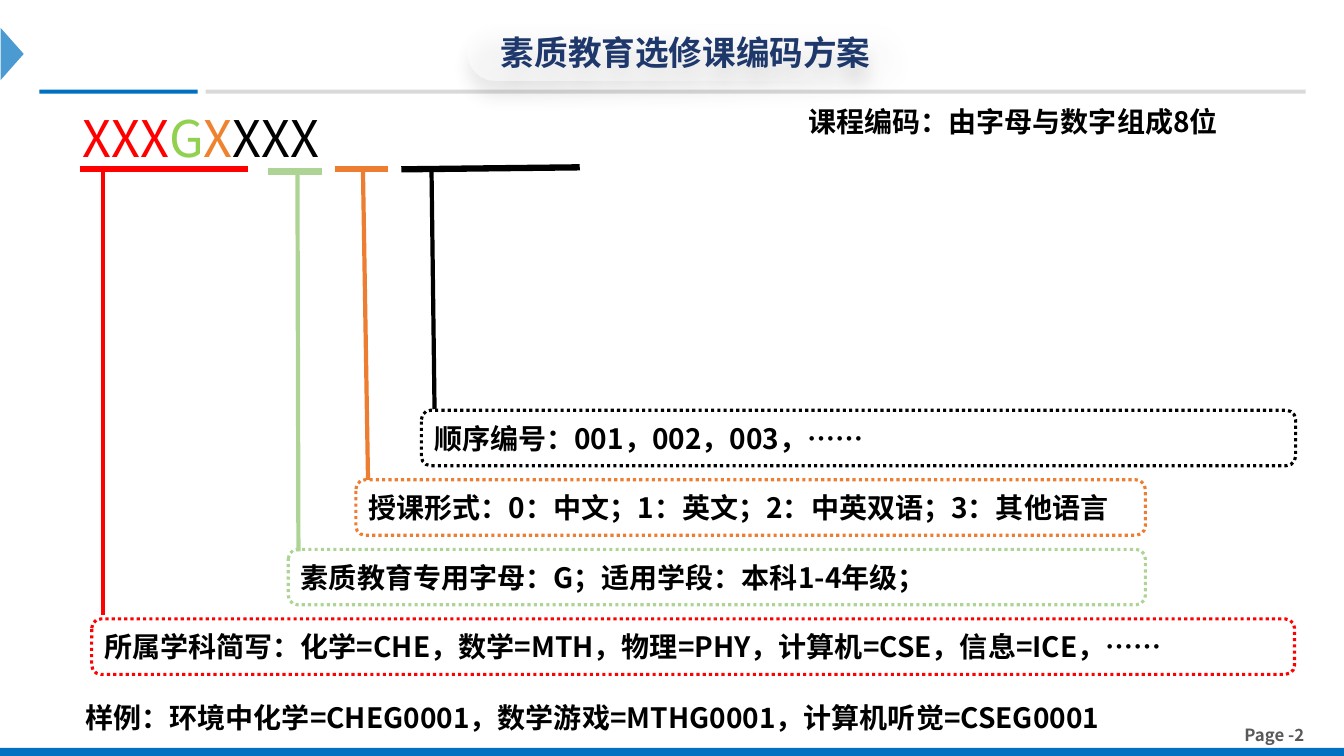
from lxml import etree
from pptx import Presentation
from pptx.dml.color import RGBColor
from pptx.enum.dml import MSO_LINE
from pptx.enum.shapes import MSO_CONNECTOR, MSO_SHAPE
from pptx.enum.text import MSO_ANCHOR, PP_ALIGN
from pptx.oxml import parse_xml
from pptx.oxml.ns import nsdecls, qn
from pptx.util import Emu, Pt

PX = 9144  # EMU per px, 100 px to the inch
FONT = "Noto Sans CJK SC"
RECTANGLE, ROUNDED = MSO_SHAPE.RECTANGLE, MSO_SHAPE.ROUNDED_RECTANGLE
TRIANGLE = MSO_SHAPE.ISOSCELES_TRIANGLE
STRAIGHT, DOTTED = MSO_CONNECTOR.STRAIGHT, MSO_LINE.ROUND_DOT
LEFT, CENTER = PP_ALIGN.LEFT, PP_ALIGN.CENTER
TOP, MIDDLE = MSO_ANCHOR.TOP, MSO_ANCHOR.MIDDLE

BLUE = RGBColor(0x00, 0x70, 0xC0)
NAVY = RGBColor(0x1E, 0x38, 0x6B)
LIGHT_GRAY = RGBColor(0xD9, 0xD9, 0xD9)
DARK_GRAY = RGBColor(0x59, 0x59, 0x59)
RED = RGBColor(0xFF, 0x00, 0x00)
LIME = RGBColor(0x92, 0xD0, 0x50)
GREEN = RGBColor(0xAE, 0xD4, 0x95)
AMBER = RGBColor(0xEE, 0x82, 0x2F)
ORANGE = RGBColor(0xED, 0x7D, 0x31)
BLACK = RGBColor(0x00, 0x00, 0x00)

# Code parts: colour, underline, stem (x1, y1, x2, y2), note box, note text
CODE_PARTS = [
    (RED, (79, 168, 246, 168), (102, 166, 102, 610), (91, 614, 1193, 55),
     "所属学科简写：化学=CHE，数学=MTH，物理=PHY，计算机=CSE，信息=ICE，……"),
    (GREEN, (266, 170, 319, 170), (295, 169, 296, 547), (286, 545, 850, 55),
     "素质教育专用字母：G；适用学段：本科1-4年级；"),
    (ORANGE, (332, 168, 385, 168), (360, 170, 365, 476), (353, 476, 783, 55),
     "授课形式：0：中文；1：英文；2：中英双语；3：其他语言"),
    (BLACK, (398, 168, 575, 166), (428, 170, 431, 406), (418, 407, 867, 55),
     "顺序编号：001，002，003，……"),
]


def emu(*lengths):
    return [Emu(length * PX) for length in lengths]


def write(shape, runs, size, bold=True, align=LEFT, anchor=TOP):
    """Fill a shape with one paragraph of (text, colour) runs."""
    frame = shape.text_frame
    frame.word_wrap = True
    frame.vertical_anchor = anchor
    paragraph = frame.paragraphs[0]
    paragraph.alignment = align
    font = paragraph.font
    font.name, font.size, font.bold = FONT, Pt(size), bold
    defaults = paragraph._p.pPr.find(qn("a:defRPr"))
    etree.SubElement(defaults, qn("a:ea")).set("typeface", FONT)
    for text, color in runs:
        run = paragraph.add_run()
        run.text = text
        run.font.color.rgb = color


def add_text(slide, box, runs, size, **style):
    write(slide.shapes.add_textbox(*emu(*box)), runs, size, **style)


def add_block(slide, kind, box, color=None):
    shape = slide.shapes.add_shape(kind, *emu(*box))
    shape.shadow.inherit = False
    shape.line.fill.background()
    if color is None:
        shape.fill.background()
    else:
        shape.fill.solid()
        shape.fill.fore_color.rgb = color
    return shape


def add_line(slide, ends, color, width):
    line = slide.shapes.add_connector(STRAIGHT, *emu(*ends))
    line.line.color.rgb = color
    line.line.width = Pt(width)
    etree.SubElement(line._element.spPr, qn("a:effectLst"))


def add_frame(slide, box):
    """Page furniture: side arrow, header rule, footer bar and page number."""
    left, top, width, height = box
    bottom = top + height
    add_text(slide, (left + 1209, bottom - 36, 110, 30),
             [("Page -2", DARK_GRAY)], 12, align=CENTER)
    add_block(slide, RECTANGLE, (left, bottom - 8, width, 8), BLUE)
    arrow = add_block(slide, TRIANGLE, (left - 14, top + 42, 52, 23), BLUE)
    arrow.rotation = 90
    color = arrow._element.spPr.find(qn("a:solidFill"))[0]
    etree.SubElement(color, qn("a:alpha")).set("val", "70000")
    add_block(slide, RECTANGLE, (left + 39, top + 89, 157, 4), BLUE)
    add_block(slide, RECTANGLE, (left + 204, top + 89, 1091, 4), LIGHT_GRAY)


def add_title(slide, box):
    """Title on a fading white pill with a soft shadow."""
    pill = add_block(slide, ROUNDED, box)
    pill.adjustments[0] = 0.5
    properties = pill._element.spPr
    properties.replace(properties.find(qn("a:noFill")), parse_xml(
        f'<a:gradFill {nsdecls("a")} rotWithShape="1"><a:gsLst>'
        '<a:gs pos="0"><a:srgbClr val="FFFFFF"><a:alpha val="69000"/></a:srgbClr></a:gs>'
        '<a:gs pos="100000"><a:srgbClr val="FFFFFF"><a:alpha val="0"/></a:srgbClr></a:gs>'
        '</a:gsLst><a:lin ang="2700000" scaled="0"/></a:gradFill>'))
    properties.find(qn("a:effectLst")).append(parse_xml(
        f'<a:outerShdw {nsdecls("a")} blurRad="{Pt(12)}" dist="{Pt(11)}" dir="5400000" '
        'algn="t" rotWithShape="0"><a:srgbClr val="404040"><a:alpha val="18000"/>'
        '</a:srgbClr></a:outerShdw>'))
    write(pill, [("素质教育选修课编码方案", NAVY)], 24, align=CENTER, anchor=MIDDLE)


def add_code_part(slide, color, underline, stem, box, text):
    """Underline below the code, with a stem down to its dotted note."""
    add_line(slide, underline, color, 4.5)
    add_line(slide, stem, color, 3)
    note = add_block(slide, ROUNDED, box)
    note.line.color.rgb = color
    note.line.width = Pt(2.25)
    note.line.dash_style = DOTTED
    write(note, [(text, BLACK)], 20, anchor=MIDDLE)


def add_coding_scheme(slide, box):
    """Code pattern, its explained parts and the examples."""
    left, top, width, height = box
    add_text(slide, (left, top + 2, 509, 71),
             [("XXX", RED), ("G", LIME), ("X", AMBER), ("XXX", BLACK)], 36, bold=False)
    for part in CODE_PARTS:
        add_code_part(slide, *part)
    add_text(slide, (left + 720, top, 481, 42),
             [("课程编码：由字母与数字组成8位", BLACK)], 20)
    add_text(slide, (left + 3, top + height - 44, 1150, 44),
             [("样例：环境中化学=CHEG0001，数学游戏=MTHG0001，计算机听觉=CSEG0001", BLACK)], 20)


def main():
    presentation = Presentation()
    presentation.slide_width, presentation.slide_height = emu(1333, 750)
    slide = presentation.slides.add_slide(presentation.slide_layouts[6])
    add_frame(slide, (0, 0, 1333, 750))
    add_title(slide, (464, 24, 432, 56))
    add_coding_scheme(slide, (72, 99, 1212, 635))
    presentation.save("out.pptx")


if __name__ == "__main__":
    main()
